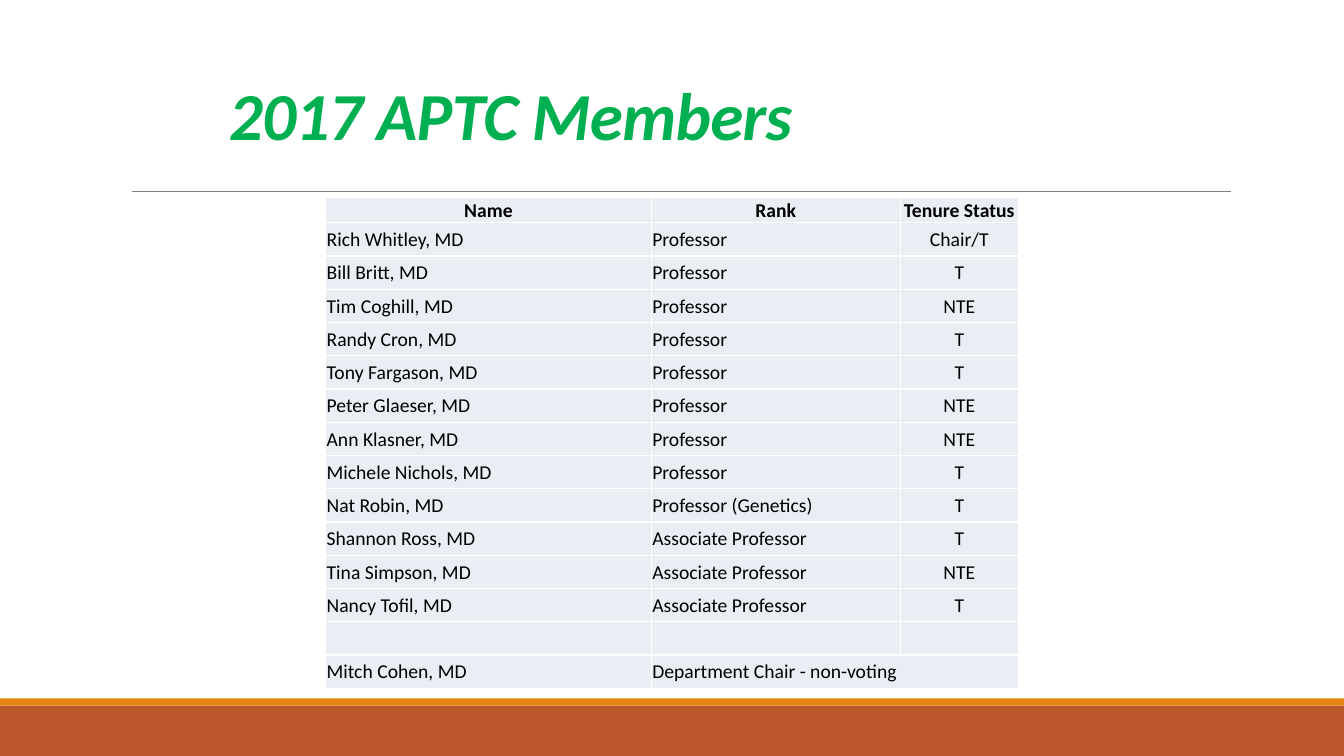
import pptx
import pptx.util
import pptx.dml.color
import pptx.enum.shapes
import pptx.enum.text
import pptx.oxml
import pptx.oxml.ns

Inches = pptx.util.Inches
Pt = pptx.util.Pt
RGBColor = pptx.dml.color.RGBColor
ALIGN = pptx.enum.text.PP_ALIGN
ANCHOR = pptx.enum.text.MSO_ANCHOR

GREEN = RGBColor(0x00, 0xB0, 0x50)
RUST = RGBColor(0xBD, 0x58, 0x2C)
ORANGE = RGBColor(0xE4, 0x83, 0x12)
GRAY = RGBColor(0x80, 0x80, 0x80)
PALE = RGBColor(0xE9, 0xED, 0xF4)
BLACK = RGBColor(0x00, 0x00, 0x00)

WIDTH, HEIGHT = 13.33, 7.5
COLS = (3.23, 2.47, 1.17)
HEAD, ROW = 0.25, 0.33

MEMBERS = [
    ("Name", "Rank", "Tenure Status"),
    ("Rich Whitley, MD", "Professor", "Chair/T"),
    ("Bill Britt, MD", "Professor", "T"),
    ("Tim Coghill, MD", "Professor", "NTE"),
    ("Randy Cron, MD", "Professor", "T"),
    ("Tony Fargason, MD", "Professor", "T"),
    ("Peter Glaeser, MD", "Professor", "NTE"),
    ("Ann Klasner, MD", "Professor", "NTE"),
    ("Michele Nichols, MD", "Professor", "T"),
    ("Nat Robin, MD", "Professor (Genetics)", "T"),
    ("Shannon Ross, MD", "Associate Professor", "T"),
    ("Tina Simpson, MD", "Associate Professor", "NTE"),
    ("Nancy Tofil, MD", "Associate Professor", "T"),
    ("", "", ""),
    ("Mitch Cohen, MD", "Department Chair - non-voting", ""),
]

TITLE_FONT = {"name": "Calibri", "size": Pt(48), "bold": True, "italic": True}
CELL_FONT = {"name": "Calibri", "size": Pt(14)}
CELL_FORM = {
    "margin_left": Inches(0.01), "margin_right": Inches(0.01),
    "margin_top": Inches(0.01), "margin_bottom": 0,
    "vertical_anchor": ANCHOR.MIDDLE,
}


def apply(target, values):
    for name, value in values.items():
        setattr(target, name, value)


def add_band(slide, x, y, w, h, color):
    band = slide.shapes.add_shape(
        pptx.enum.shapes.MSO_SHAPE.RECTANGLE,
        Inches(x), Inches(y), Inches(w), Inches(h))
    band.shadow.inherit = False
    band.fill.solid()
    band.fill.fore_color.rgb = color
    band.line.fill.background()


def add_footer(slide, x, y, w, h):
    """Place a thin orange strip on top of a rust band."""
    strip = 0.07
    add_band(slide, x, y + strip, w, h - strip, RUST)
    add_band(slide, x, y, w, strip, ORANGE)


def add_rule(slide, x, y, w):
    rule = slide.shapes.add_connector(
        pptx.enum.shapes.MSO_CONNECTOR.STRAIGHT,
        Inches(x), Inches(y), Inches(x + w), Inches(y))
    rule.line.color.rgb = GRAY
    rule.line.width = Pt(0.5)
    rule._element.spPr.append(pptx.oxml.parse_xml(
        f'<a:effectLst {pptx.oxml.ns.nsdecls("a")}/>'))


def set_title(slide, x, y, w, h, text):
    title = slide.shapes.title
    apply(title, {"left": Inches(x), "top": Inches(y),
                  "width": Inches(w), "height": Inches(h)})
    frame = title.text_frame
    apply(frame, {"text": text, "word_wrap": True,
                  "vertical_anchor": ANCHOR.BOTTOM,
                  "auto_size": pptx.enum.text.MSO_AUTO_SIZE.NONE})
    line = frame.paragraphs[0]
    apply(line, {"alignment": ALIGN.LEFT, "line_spacing": 0.85})
    run = line.runs[0]
    apply(run.font, TITLE_FONT)
    run.font.color.rgb = GREEN
    run._r.get_or_add_rPr().set("spc", "-50")


def add_edges(cell):
    """Give the cell white one-point borders on all four sides."""
    props = cell._tc.get_or_add_tcPr()
    for place, side in enumerate(("lnL", "lnR", "lnT", "lnB")):
        props.insert(place, pptx.oxml.parse_xml(
            f'<a:{side} {pptx.oxml.ns.nsdecls("a")} w="12700"><a:solidFill>'
            f'<a:srgbClr val="FFFFFF"/></a:solidFill></a:{side}>'))


def fill_cell(cell, text, bold, align):
    apply(cell, CELL_FORM)
    cell.fill.solid()
    cell.fill.fore_color.rgb = PALE
    add_edges(cell)
    cell.text = text
    line = cell.text_frame.paragraphs[0]
    line.alignment = align
    for run in line.runs:
        apply(run.font, CELL_FONT)
        run.font.bold = bold
        run.font.color.rgb = BLACK


def add_members(slide, x, y):
    count = len(MEMBERS)
    table = slide.shapes.add_table(
        count, len(COLS), Inches(x), Inches(y), Inches(sum(COLS)),
        Inches(HEAD + ROW * (count - 1))).table
    apply(table, {"first_row": False, "horz_banding": False})
    for col, width in zip(table.columns, COLS):
        col.width = Inches(width)
    for r, member in enumerate(MEMBERS):
        table.rows[r].height = Inches(ROW if r else HEAD)
        for c, text in enumerate(member):
            center = r == 0 or c == 2
            fill_cell(table.cell(r, c), text, r == 0,
                      ALIGN.CENTER if center else ALIGN.LEFT)
    last = count - 1
    table.cell(last, 1).merge(table.cell(last, 2))


def main():
    deck = pptx.Presentation()
    apply(deck, {"slide_width": Inches(WIDTH), "slide_height": Inches(HEIGHT)})
    slide = deck.slides.add_slide(deck.slide_layouts[5])
    add_footer(slide, 0, 6.93, WIDTH, HEIGHT - 6.93)
    add_rule(slide, 1.31, 1.9, 10.9)
    set_title(slide, 2.17, 0.33, 9, 1.25, "2017 APTC Members")
    add_members(slide, 3.23, 1.96)
    deck.save("out.pptx")


if __name__ == "__main__":
    main()
